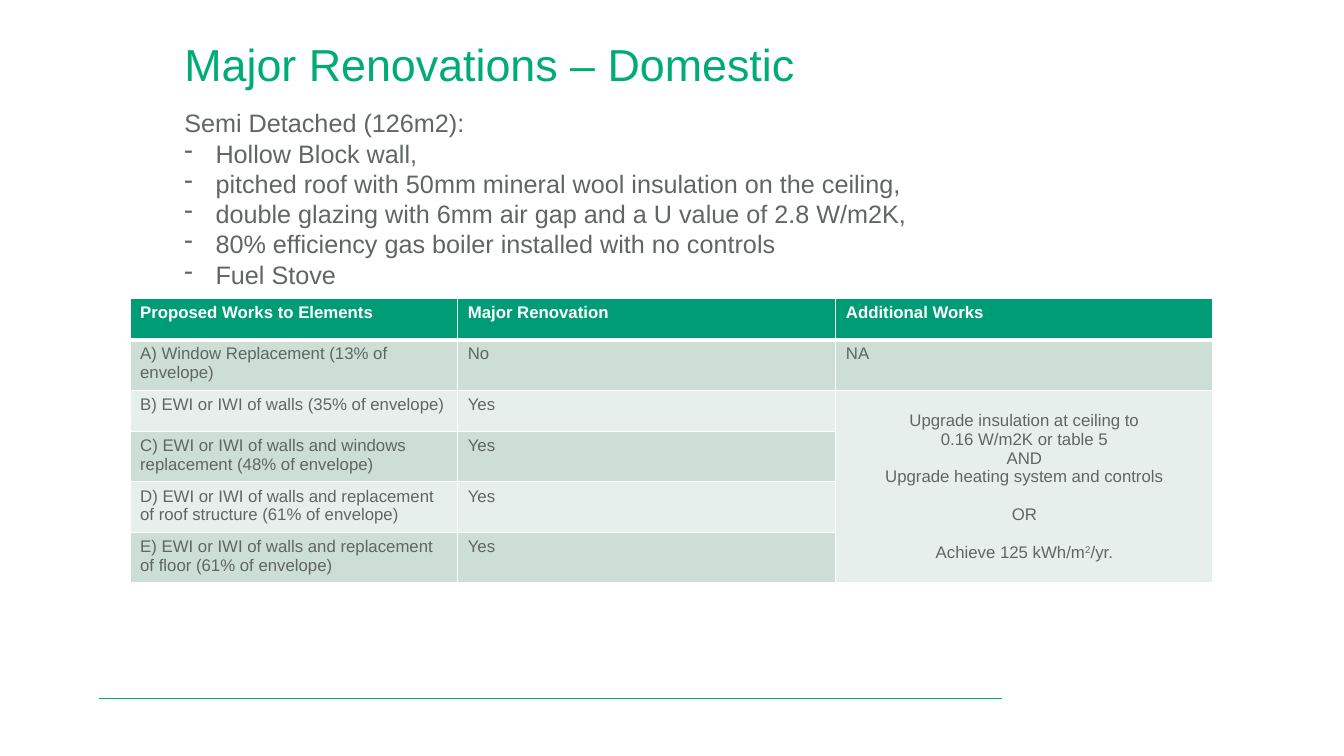
from dataclasses import dataclass

from lxml.etree import SubElement
from pptx import Presentation
from pptx.dml.color import RGBColor
from pptx.enum.shapes import MSO_CONNECTOR
from pptx.enum.text import MSO_ANCHOR, PP_ALIGN
from pptx.oxml import parse_xml
from pptx.oxml.ns import nsdecls, qn
from pptx.slide import Slide
from pptx.table import _Cell
from pptx.text.text import Font, TextFrame
from pptx.util import Inches, Pt


@dataclass(frozen=True)
class Theme:
    face: str = "Arial"
    green: str = "00AC75"
    head: str = "009C75"
    dark: str = "CCDED6"
    light: str = "E7EFEC"
    ink: str = "616565"
    white: str = "FFFFFF"
    title: int = 32
    body: int = 18
    cell: int = 12
    gap: float = 13.4


@dataclass(frozen=True)
class Box:
    left: float
    top: float
    width: float
    height: float


@dataclass(frozen=True)
class Work:
    name: str
    major: str
    extra: str = ""


THEME = Theme()
HEAD = Work("Proposed Works to Elements", "Major Renovation", "Additional Works")
WORKS = [
    Work("A) Window Replacement (13% of envelope)", "No", "NA"),
    Work("B) EWI or IWI of walls (35% of envelope)", "Yes"),
    Work("C) EWI or IWI of walls and windows replacement (48% of envelope)", "Yes"),
    Work("D) EWI or IWI of walls and replacement of roof structure (61% of envelope)", "Yes"),
    Work("E) EWI or IWI of walls and replacement of floor (61% of envelope)", "Yes"),
]
COLS = [3.25, 3.75, 3.74]
ROWS = [0.41, 0.5, 0.41, 0.5, 0.5, 0.5]
HOUSE = "Semi Detached (126m2):"
FACTS = [
    "Hollow Block wall,",
    "pitched roof with 50mm mineral wool insulation on the ceiling,",
    "double glazing with 6mm air gap and a U value of 2.8 W/m2K,",
    "80% efficiency gas boiler installed with no controls",
    "Fuel Stove",
]
STEPS = [
    "Upgrade insulation at ceiling to",
    "0.16 W/m2K or table 5",
    "AND",
    "Upgrade heating system and controls",
    "OR",
    "Achieve 125 kWh/m",
]


def style(font: Font, size: int, color: str, bold: bool = False) -> None:
    font.name = THEME.face
    font.size = Pt(size)
    font.bold = bold
    font.color.rgb = RGBColor.from_string(color)


def add_text(slide: Slide, box: Box, lines: list[str], size: int, color: str) -> TextFrame:
    """Add a text box whose lines after the first are dash bullets."""
    shape = slide.shapes.add_textbox(
        Inches(box.left), Inches(box.top), Inches(box.width), Inches(box.height))
    frame = shape.text_frame
    frame.word_wrap = True
    frame.text = "\n".join(lines)
    for order, para in enumerate(frame.paragraphs):
        if order:
            props = para._p.get_or_add_pPr()
            props.set("marL", str(Inches(0.31)))
            props.set("indent", str(Inches(-0.31)))
            SubElement(props, qn("a:buChar"), char="-")
        for run in para.runs:
            style(run.font, size, color)
    return frame


def edge(cell: _Cell, top: int, base: int) -> None:
    """Give a cell white borders, with the top and bottom widths in points."""
    props = cell._tc.get_or_add_tcPr()
    for order, (side, width) in enumerate(zip("LRTB", (1, 1, top, base))):
        props.insert(order, parse_xml(
            f'<a:ln{side} {nsdecls("a")} w="{Pt(width)}"><a:solidFill>'
            f'<a:srgbClr val="{THEME.white}"/></a:solidFill></a:ln{side}>'))


def fill_steps(cell: _Cell) -> None:
    """Write the shared steps, centred, with space around OR."""
    cell.vertical_anchor = MSO_ANCHOR.MIDDLE
    frame = cell.text_frame
    frame.text = "\n".join(STEPS)
    last = frame.paragraphs[-1]
    power = last.add_run()
    power.text = "2"
    power._r.get_or_add_rPr().set("baseline", "30000")
    last.add_run().text = "/yr."
    for para in frame.paragraphs:
        para.alignment = PP_ALIGN.CENTER
        for run in para.runs:
            style(run.font, THEME.cell, THEME.ink)
    for para in frame.paragraphs[-2:]:
        para.space_before = Pt(THEME.gap)


def add_works(slide: Slide, box: Box) -> None:
    table = slide.shapes.add_table(
        len(ROWS), len(COLS), Inches(box.left), Inches(box.top),
        Inches(box.width), Inches(box.height)).table
    for col, width in zip(table.columns, COLS):
        col.width = Inches(width)
    for row, height in zip(table.rows, ROWS):
        row.height = Inches(height)
    for order, work in enumerate([HEAD, *WORKS]):
        first = order == 0
        shade = THEME.head if first else THEME.dark if order % 2 else THEME.light
        ink = THEME.white if first else THEME.ink
        for col, text in enumerate((work.name, work.major, work.extra)):
            cell = table.cell(order, col)
            cell.fill.solid()
            cell.fill.fore_color.rgb = RGBColor.from_string(shade)
            edge(cell, 3 if order == 1 else 1, 3 if first else 1)
            if text:
                cell.text_frame.text = text
                style(cell.text_frame.paragraphs[0].runs[0].font, THEME.cell, ink, first)
    shared = table.cell(2, 2)
    shared.merge(table.cell(5, 2))
    fill_steps(shared)


def add_rule(slide: Slide) -> None:
    rule = slide.shapes.add_connector(
        MSO_CONNECTOR.STRAIGHT, Inches(9.94), Inches(6.93), Inches(0.98), Inches(6.93))
    rule.line.color.rgb = RGBColor.from_string(THEME.green)
    rule.line.width = Pt(0.5)
    SubElement(rule._element.spPr, qn("a:effectLst"))


def main() -> None:
    deck = Presentation()
    deck.slide_width = Inches(13.33)
    deck.slide_height = Inches(7.5)
    slide = deck.slides.add_slide(deck.slide_layouts[6])
    add_rule(slide)
    add_text(slide, Box(1.73, 0.32, 10.46, 0.9), ["Major Renovations – Domestic"],
             THEME.title, THEME.green)
    add_works(slide, Box(1.29, 2.96, 10.74, 2.81))
    add_text(slide, Box(1.73, 1.02, 9.87, 1.92), [HOUSE, *FACTS], THEME.body, THEME.ink)
    deck.save("out.pptx")


if __name__ == "__main__":
    main()
